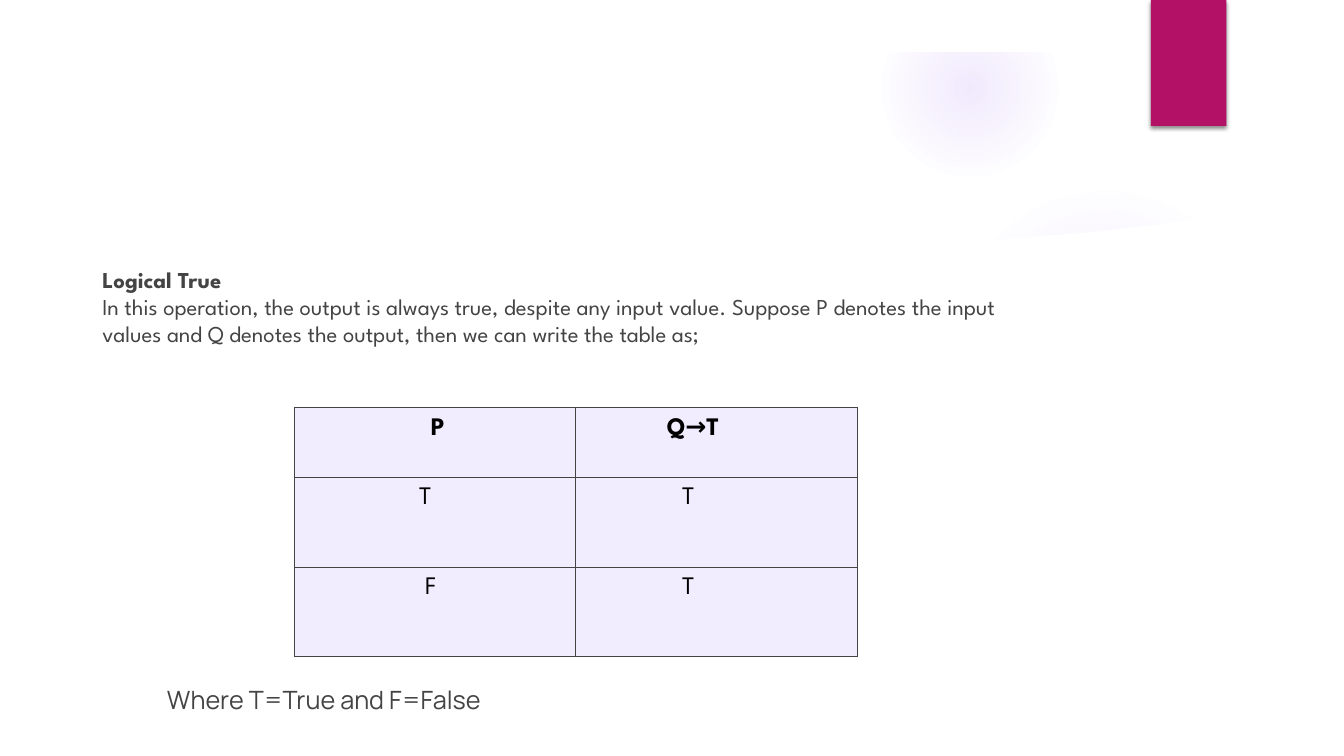
from pptx import Presentation
from pptx.dml.color import RGBColor
from pptx.enum.shapes import MSO_SHAPE
from pptx.enum.text import MSO_ANCHOR
from pptx.oxml import parse_xml
from pptx.oxml.ns import nsdecls
from pptx.util import Emu, Pt

OVAL, RECT = MSO_SHAPE.OVAL, MSO_SHAPE.RECTANGLE
TOP = MSO_ANCHOR.TOP
THEME = {
    "white": "FFFFFF", "glow": "9B6BF2", "bar": "B31166",
    "ink": "444444", "black": "000000", "cell": "F1EDFF",
    "head": "League Spartan", "note": "Manrope",
    "body_pt": 16.2, "big_pt": 18,
}
NS = nsdecls("a")

# The slide is a grid of 160 columns by 90 rows.
deck = Presentation()
deck.slide_width, deck.slide_height = Emu(12192000), Emu(6858000)
UNIT = deck.slide_width / 160
slide = deck.slides.add_slide(deck.slide_layouts[6])
shapes = slide.shapes


def grid(*cells):
    return [Emu(round(n * UNIT)) for n in cells]


def write(par, text, font, size, color, bold=False):
    run = par.add_run()
    run.text = text
    run.font.name, run.font.size, run.font.bold = font, Pt(size), bold
    run.font.color.rgb = RGBColor.from_string(color)


# Soft glows: place, then (position, opacity) of each stop in percent
glows = [
    ((113, 22, 37, 37), [(0, 7), (36, 6), (69, 0), (100, 0)]),
    ((105, 0, 21, 21), [(0, 14), (36, 7), (73, 0), (100, 0)]),
]
for place, stops in glows:
    glow = shapes.add_shape(OVAL, *grid(*place))
    glow.shadow.inherit = False
    glow.line.fill.background()
    glow.fill.solid()
    marks = "".join(
        f'<a:gs pos="{pos * 1000}"><a:srgbClr val="{THEME["glow"]}">'
        f'<a:alpha val="{alpha * 1000}"/></a:srgbClr></a:gs>'
        for pos, alpha in stops)
    props = glow._element.spPr
    props.replace(props.solidFill, parse_xml(
        f'<a:gradFill {NS}><a:gsLst>{marks}</a:gsLst><a:path path="circle">'
        '<a:fillToRect l="50000" t="50000" r="50000" b="50000"/>'
        '</a:path></a:gradFill>'))

# White panel with a curved top, white top edge, and the coloured bar
curve = [(6, 24.5), (30, 27.2), (53, 28.9), (78, 29.8), (101, 29.5),
         (114, 28.9), (120.5, 28.4), (130.5, 27.6), (140.5, 26.4),
         (154, 24.5), (154, 84), (6, 84)]
points = [grid(*point) for point in curve]
pen = shapes.build_freeform(*points[0], scale=1.0)
pen.add_line_segments(points[1:], close=True)
panel = pen.convert_to_shape()
edge = shapes.add_shape(RECT, *grid(0, 0, 160, 6.2))
bar = shapes.add_shape(RECT, *grid(137, 0, 9, 15))
for shape, color in [(panel, "white"), (edge, "white"), (bar, "bar")]:
    shape.shadow.inherit = False
    shape.fill.solid()
    shape.fill.fore_color.rgb = RGBColor.from_string(THEME[color])
    shape.line.fill.background()
props = bar._element.spPr
props.replace(props.find("{*}effectLst"), parse_xml(
    f'<a:effectLst {NS}><a:outerShdw blurRad="{Pt(3)}" dist="{Pt(2)}" '
    f'dir="5400000"><a:srgbClr val="{THEME["black"]}"><a:alpha val="45000"/>'
    '</a:srgbClr></a:outerShdw></a:effectLst>'))

# Heading and note
title = [("Logical True", True),
         ("In this operation, the output is always true, despite any input "
          "value. Suppose P denotes the input values and Q denotes the "
          "output, then we can write the table as;", False)]
note = [("Where T=True and F=False", False)]
for place, lines, font, size in [
        ((11, 31, 115, 11), title, THEME["head"], THEME["body_pt"]),
        ((18.7, 80.9, 80, 4.8), note, THEME["note"], THEME["big_pt"])]:
    frame = shapes.add_textbox(*grid(*place)).text_frame
    frame.word_wrap = True
    frame.vertical_anchor = TOP
    for i, (text, bold) in enumerate(lines):
        par = frame.add_paragraph() if i else frame.paragraphs[0]
        write(par, text, font, size, THEME["ink"], bold)

# Truth table: text and its left inset in grid columns
truth = [[("P", 16.3), ("Q→T", 10.9)],
         [("T", 14.9), ("T", 12.7)],
         [("F", 15.6), ("T", 12.7)]]
table = shapes.add_table(3, 2, *grid(35, 48.5, 67, 29.7)).table
for col in table.columns:
    col.width = grid(33.5)[0]
for r, row in enumerate(truth):
    table.rows[r].height = grid(10.7 if r else 8.3)[0]
    for c, (text, inset) in enumerate(row):
        cell = table.cell(r, c)
        cell.margin_left, cell.margin_right, cell.margin_top, \
            cell.margin_bottom = grid(inset, 0.8, 1.2, 1.2)
        cell.fill.solid()
        cell.fill.fore_color.rgb = RGBColor.from_string(THEME["cell"])
        write(cell.text_frame.paragraphs[0], text, THEME["head"],
              THEME["big_pt"], THEME["black"], r == 0)
        for i, side in enumerate("LRTB"):
            width = Pt(0.6 if r == 2 and side == "B" else 0.3)
            cell._tc.get_or_add_tcPr().insert(i, parse_xml(
                f'<a:ln{side} {NS} w="{width}"><a:solidFill>'
                f'<a:srgbClr val="{THEME["ink"]}"/></a:solidFill>'
                f'</a:ln{side}>'))

deck.save("out.pptx")
